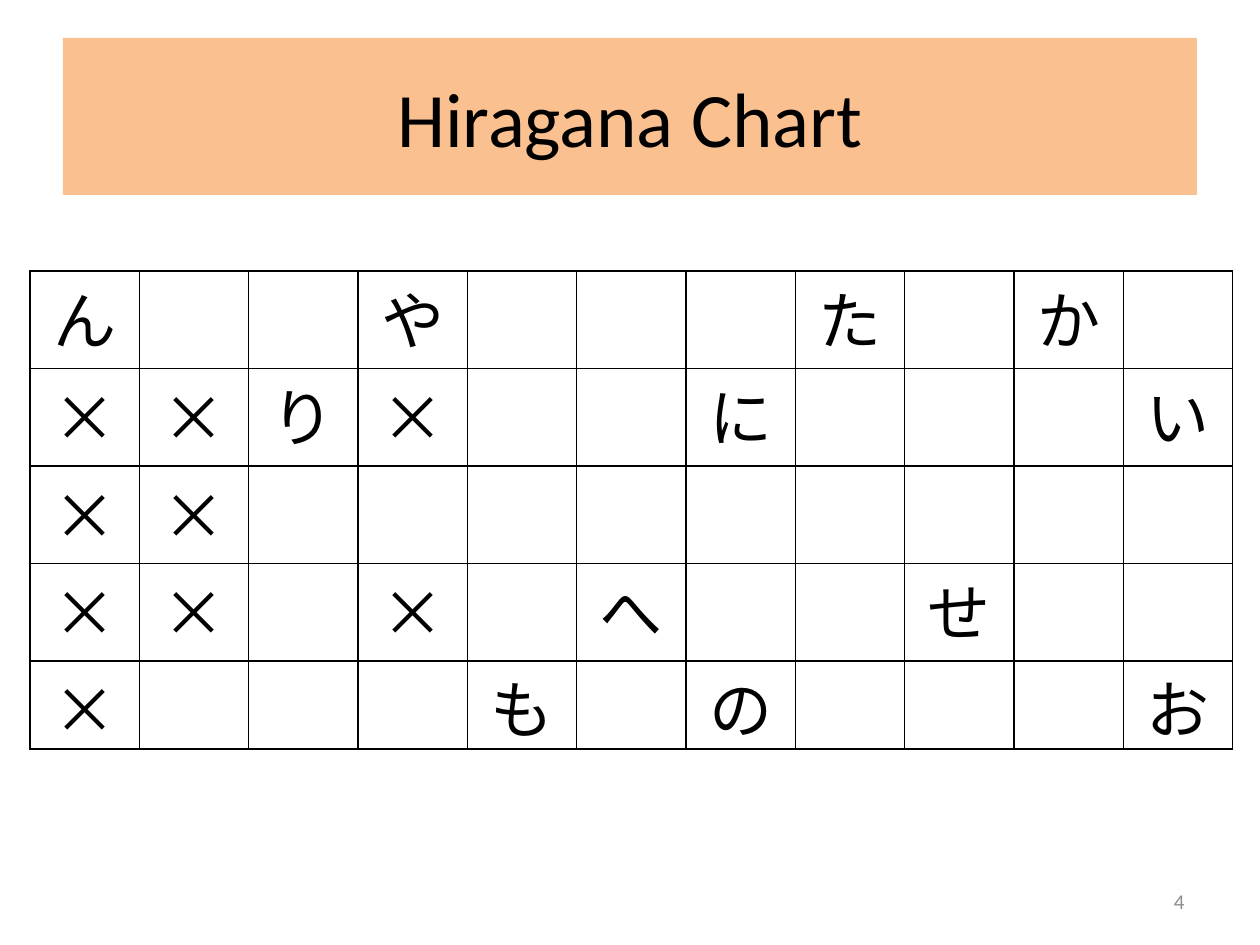
import dataclasses

import pptx
import pptx.dml.color
import pptx.enum.shapes
import pptx.enum.text
import pptx.oxml
import pptx.oxml.ns
import pptx.util

EMU_PER_PX = 914400 // 126
ALIGN = pptx.enum.text.PP_ALIGN

# One string per row, one character per cell; "." is a cell left to fill in.
KANA_ROWS = (
    "ん..や...た.か.",
    "××り×..に...い",
    "××.........",
    "××.×.へ..せ..",
    "×...も.の...お",
)


@dataclasses.dataclass(frozen=True)
class Theme:
    banner: str = "FAC090"
    ink: str = "000000"
    muted: str = "8C8C8C"
    latin: str = "Calibri"
    kana: str = "Noto Sans CJK JP"
    title_pt: int = 44
    kana_pt: int = 36
    number_pt: int = 12
    border_pt: int = 1


THEME = Theme()


def px(n):
    return pptx.util.Emu(n * EMU_PER_PX)


def rgb(value):
    return pptx.dml.color.RGBColor.from_string(value)


def add_run(p, text, font, size, color, align):
    p.alignment = align
    r = p.add_run()
    r.text = text
    r.font.name = font
    r.font.size = pptx.util.Pt(size)
    r.font.color.rgb = rgb(color)
    return r


def set_east_asian_font(r, font):
    ea = pptx.oxml.parse_xml(
        f'<a:ea {pptx.oxml.ns.nsdecls("a")} typeface="{font}"/>')
    r.font._element.append(ea)


def add_banner(s, text, box):
    sp = s.shapes.add_shape(
        pptx.enum.shapes.MSO_SHAPE.RECTANGLE, *map(px, box))
    sp.shadow.inherit = False
    sp.fill.solid()
    sp.fill.fore_color.rgb = rgb(THEME.banner)
    sp.line.fill.background()
    tf = sp.text_frame
    tf.vertical_anchor = pptx.enum.text.MSO_ANCHOR.MIDDLE
    add_run(tf.paragraphs[0], text, THEME.latin, THEME.title_pt,
            THEME.ink, ALIGN.CENTER)


def add_page_number(s, text, box):
    tf = s.shapes.add_textbox(*map(px, box)).text_frame
    tf.word_wrap = True
    tf.vertical_anchor = pptx.enum.text.MSO_ANCHOR.MIDDLE
    add_run(tf.paragraphs[0], text, THEME.latin, THEME.number_pt,
            THEME.muted, ALIGN.RIGHT)


def set_borders(cell):
    """Draw all four sides; border elements must precede the cell's fill."""
    tc_pr = cell._tc.get_or_add_tcPr()
    width = pptx.util.Pt(THEME.border_pt)
    for i, side in enumerate(("lnL", "lnR", "lnT", "lnB")):
        tc_pr.insert(i, pptx.oxml.parse_xml(
            f'<a:{side} {pptx.oxml.ns.nsdecls("a")} w="{width}"><a:solidFill>'
            f'<a:srgbClr val="{THEME.ink}"/></a:solidFill></a:{side}>'))


def fill_cell(cell, char):
    cell.fill.background()
    set_borders(cell)
    cell.margin_left = cell.margin_right = px(9)
    cell.margin_top = cell.margin_bottom = 0
    if char != ".":
        r = add_run(cell.text_frame.paragraphs[0], char, THEME.kana,
                    THEME.kana_pt, THEME.ink, ALIGN.CENTER)
        set_east_asian_font(r, THEME.kana)


def add_kana_table(s, rows, box, last_height):
    """Equal columns; equal rows above a last row of its own height."""
    width, height = box[2:]
    n_rows, n_cols = len(rows), len(rows[0])
    table = s.shapes.add_table(n_rows, n_cols, *map(px, box)).table
    table.first_row = table.horz_banding = False
    for col in table.columns:
        col.width = px(width) // n_cols
    for row in table.rows:
        row.height = px(height - last_height) // (n_rows - 1)
    table.rows[n_rows - 1].height = px(last_height)
    for i, chars in enumerate(rows):
        for j, char in enumerate(chars):
            fill_cell(table.cell(i, j), char)


def main():
    prs = pptx.Presentation()
    prs.slide_width, prs.slide_height = px(1260), px(945)
    s = prs.slides.add_slide(prs.slide_layouts[6])
    add_banner(s, "Hiragana Chart", (63, 38, 1134, 157))
    add_page_number(s, "4", (903, 876, 294, 50))
    add_kana_table(s, KANA_ROWS, (30, 271, 1203, 478), last_height=88)
    prs.save("out.pptx")


if __name__ == "__main__":
    main()
